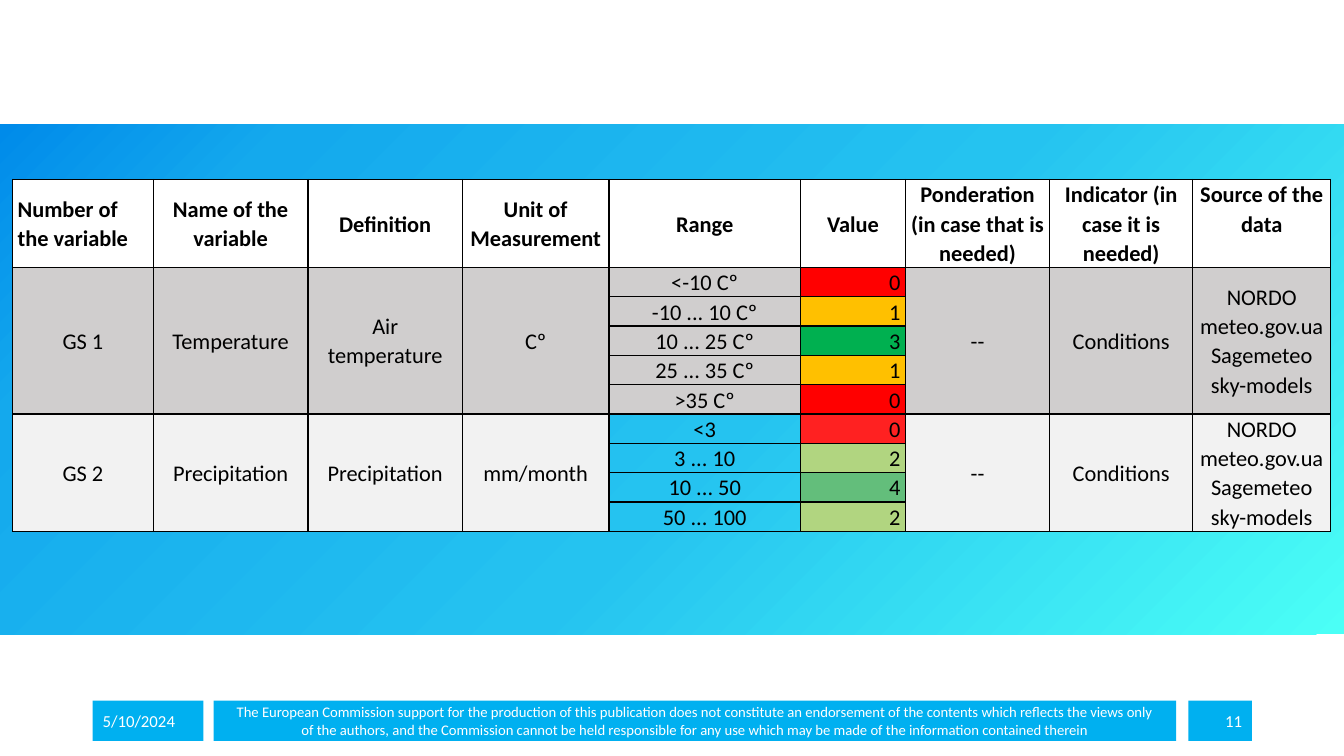
"""Build a slide with a table of geosystem variables, their ranges and values."""
from dataclasses import dataclass
from typing import Optional

from lxml.etree import SubElement
from pptx import Presentation
from pptx.dml.color import RGBColor
from pptx.enum.shapes import MSO_SHAPE
from pptx.enum.text import MSO_ANCHOR, PP_ALIGN
from pptx.oxml.ns import qn
from pptx.util import Pt

COLORS = {
    "white": "FFFFFF", "black": "000000", "footer": "00B0F0",
    "grey": "D0CECE", "pale": "F2F2F2",
    "red": "FF0000", "amber": "FFC000", "green": "00B050",
    "coral": "FF2121", "lime": "B1D580", "leaf": "63BE7B",
    "aqua": "4BFFF6", "sky": "25C3F0", "azure": "14A9ED", "blue": "008BEA",
}
BAND_STOPS = [(0, "aqua"), (44, "sky"), (84, "azure"), (100, "blue")]
LEFT, CENTER, RIGHT = PP_ALIGN.LEFT, PP_ALIGN.CENTER, PP_ALIGN.RIGHT
RANGE_COL, VALUE_COL = 4, 5
COL_WIDTHS = [100.5, 110.5, 110.3, 104.7, 136.8, 75, 103, 102.2, 98.6]
HEADER_HEIGHT, ROW_HEIGHT = 35.3, 17.3
HEADERS = [
    "Number of the variable", "Name of the variable", "Definition",
    "Unit of Measurement", "Range", "Value",
    "Ponderation (in case that is needed)",
    "Indicator (in case it is needed)", "Source of the data",
]
SOURCES = "NORDO\nmeteo.gov.ua\nSagemeteo\nsky-models"


@dataclass
class Level:
    label: str
    value: str
    color: str


@dataclass
class Variable:
    merged: dict[int, str]
    fill: str
    range_fill: Optional[str]
    levels: list[Level]


@dataclass
class Footer:
    left: float
    width: float
    text: str
    size: float
    align: PP_ALIGN


def merged_texts(number: str, name: str, definition: str, unit: str) -> dict[int, str]:
    """Map column numbers to the texts that span a whole variable."""
    return {0: number, 1: name, 2: definition, 3: unit,
            6: "--", 7: "Conditions", 8: SOURCES}


VARIABLES = [
    Variable(merged_texts("GS 1", "Temperature", "Air temperature", "Cº"), "grey", "grey", [
        Level("<-10 Cº", "0", "red"),
        Level("-10 ... 10 Cº", "1", "amber"),
        Level("10 ... 25 Cº", "3", "green"),
        Level("25 ... 35 Cº", "1", "amber"),
        Level(">35 Cº", "0", "red"),
    ]),
    Variable(merged_texts("GS 2", "Precipitation", "Precipitation", "mm/month"), "pale", None, [
        Level("<3", "0", "coral"),
        Level("3 ... 10", "2", "lime"),
        Level("10 ... 50", "4", "leaf"),
        Level("50 ... 100", "2", "lime"),
    ]),
]
FOOTERS = [
    Footer(66.2, 79.2, "5/10/2024", 12, LEFT),
    Footer(152.6, 687.6,
           "The European Commission support for the production of this publication does not "
           "constitute an endorsement of the contents which reflects the views only\n"
           "of the authors, and the Commission cannot be held responsible for any use which "
           "may be made of the information contained therein", 10.5, CENTER),
    Footer(848.9, 45.4, "11", 12, RIGHT),
]


def rgb(name: str) -> RGBColor:
    """Return a named colour."""
    return RGBColor.from_string(COLORS[name])


def write(tf, text: str, size: float, color: str, align: PP_ALIGN,
          bold: bool = False, spacing: Optional[float] = None) -> None:
    """Fill a text frame with formatted paragraphs."""
    tf.text = text
    for p in tf.paragraphs:
        p.alignment = align
        if spacing:
            p.line_spacing = spacing
        for key, val in {"name": "Calibri", "size": Pt(size), "bold": bold}.items():
            setattr(p.font, key, val)
        p.font.color.rgb = rgb(color)


def add_box(s, left: float, top: float, width: float, height: float):
    """Add a plain rectangle without line or shadow."""
    sp = s.shapes.add_shape(MSO_SHAPE.RECTANGLE, Pt(left), Pt(top), Pt(width), Pt(height))
    sp.shadow.inherit = False
    sp.line.fill.background()
    return sp


def add_band(s) -> None:
    """Add the wide gradient band behind the table."""
    sp = add_box(s, 0, 88.6, 960, 364.3)
    sp.fill.gradient()
    sp.fill.gradient_angle = 135
    stops = sp.element.spPr.find(".//" + qn("a:gsLst"))
    stops.clear()
    for pos, name in BAND_STOPS:
        gs = SubElement(stops, qn("a:gs"), pos=str(pos * 1000))
        SubElement(gs, qn("a:srgbClr"), val=COLORS[name])


def add_footer(s, footer: Footer) -> None:
    """Add one box of the footer row."""
    sp = add_box(s, footer.left, 500.4, footer.width, 28.8)
    sp.fill.solid()
    sp.fill.fore_color.rgb = rgb("footer")
    tf = sp.text_frame
    tf.word_wrap = True
    tf.vertical_anchor = MSO_ANCHOR.MIDDLE
    write(tf, footer.text, footer.size, "white", footer.align)


def set_cell(cell, text: str, fill: Optional[str], align: PP_ALIGN = CENTER,
             bold: bool = False) -> None:
    """Write a bordered table cell."""
    tcPr = cell._tc.get_or_add_tcPr()
    for side in ("a:lnL", "a:lnR", "a:lnT", "a:lnB"):
        ln = SubElement(tcPr, qn(side), w=str(Pt(1)))
        SubElement(SubElement(ln, qn("a:solidFill")), qn("a:srgbClr"), val=COLORS["black"])
    if fill:
        cell.fill.solid()
        cell.fill.fore_color.rgb = rgb(fill)
    else:
        cell.fill.background()
    for key, val in {"margin_left": Pt(3.6), "margin_right": Pt(3.6), "margin_top": 0,
                     "margin_bottom": 0, "vertical_anchor": MSO_ANCHOR.MIDDLE}.items():
        setattr(cell, key, val)
    write(cell.text_frame, text, 16, "black", align, bold, 1.07)


def add_variable(table, top: int, var: Variable) -> None:
    """Write the rows of one variable, starting at the row given."""
    for i, level in enumerate(var.levels):
        set_cell(table.cell(top + i, RANGE_COL), level.label, var.range_fill)
        set_cell(table.cell(top + i, VALUE_COL), level.value, level.color, RIGHT)
        for col, text in var.merged.items():
            set_cell(table.cell(top + i, col), "" if i else text, var.fill)
    for col in var.merged:
        table.cell(top, col).merge(table.cell(top + len(var.levels) - 1, col))


def add_variables_table(s) -> None:
    """Add the table with its header and all variables."""
    count = 1 + sum(len(var.levels) for var in VARIABLES)
    frame = s.shapes.add_table(count, len(HEADERS), Pt(9), Pt(128.2),
                               Pt(sum(COL_WIDTHS)), Pt(240.5))
    table = frame.table
    table.first_row = table.horz_banding = False
    for col, width in zip(table.columns, COL_WIDTHS):
        col.width = Pt(width)
    for i, row in enumerate(table.rows):
        row.height = Pt(ROW_HEIGHT if i else HEADER_HEIGHT)
    for col, text in enumerate(HEADERS):
        set_cell(table.cell(0, col), text, "white", CENTER if col else LEFT, True)
    table.cell(0, len(HEADERS) - 1).vertical_anchor = MSO_ANCHOR.TOP
    top = 1
    for var in VARIABLES:
        add_variable(table, top, var)
        top += len(var.levels)


def main() -> None:
    """Build and save the slide."""
    prs = Presentation()
    prs.slide_width, prs.slide_height = Pt(960), Pt(540)
    s = prs.slides.add_slide(prs.slide_layouts[6])
    add_band(s)
    for footer in FOOTERS:
        add_footer(s, footer)
    add_variables_table(s)
    prs.save("out.pptx")


if __name__ == "__main__":
    main()
